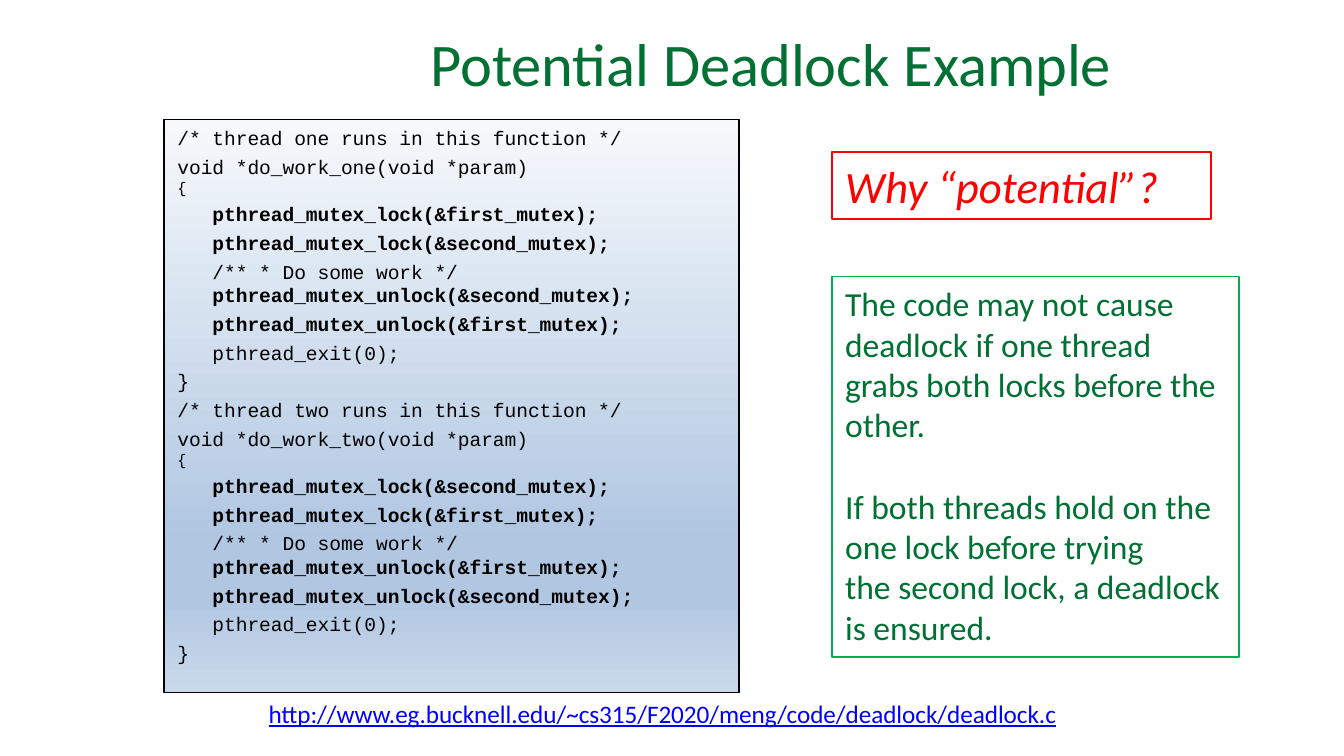
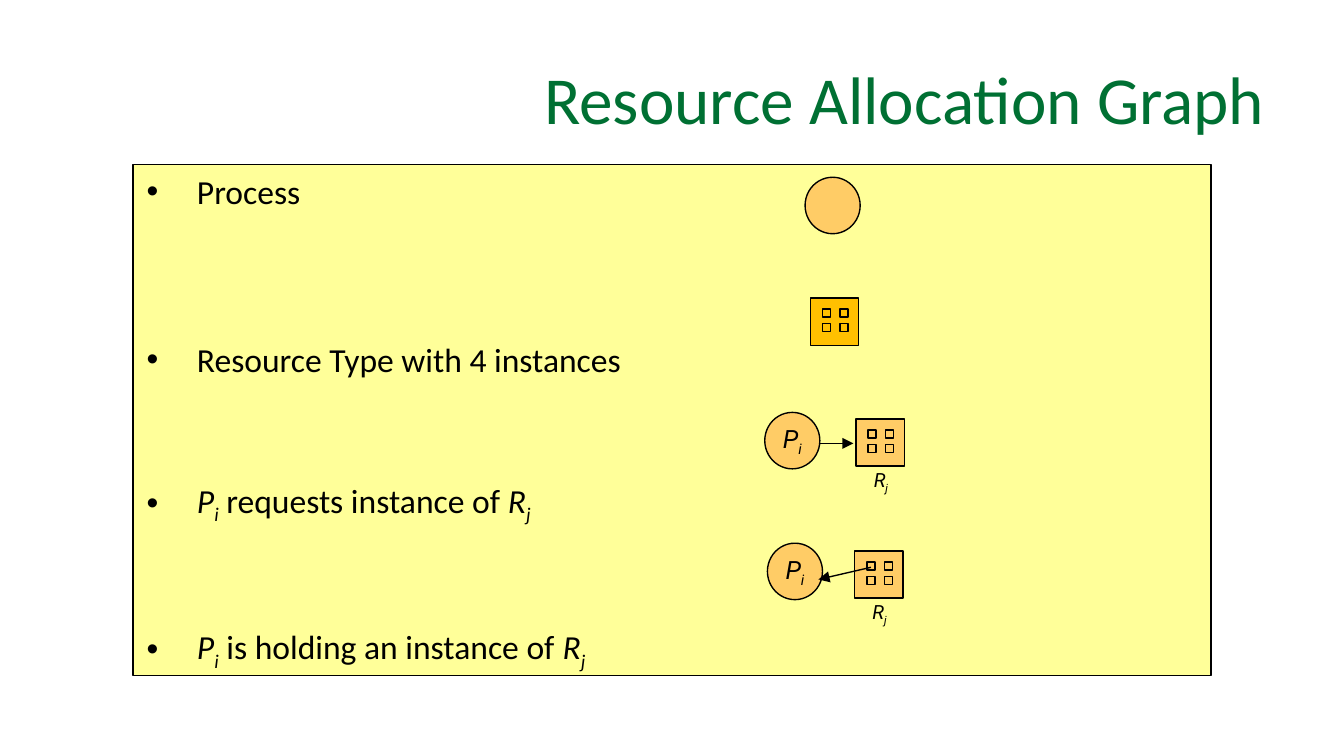
from typing import NamedTuple, Optional

from lxml.etree import SubElement as Sub
from pptx import Presentation
from pptx.dml.color import RGBColor
from pptx.enum.shapes import MSO_CONNECTOR as Link, MSO_SHAPE as Form
from pptx.enum.text import MSO_ANCHOR as Anchor, MSO_AUTO_SIZE as Fit, PP_ALIGN as Align
from pptx.oxml.ns import qn
from pptx.util import Inches, Pt

# Widescreen, 16 to 9
WIDE = Inches(10)
HIGH = WIDE * 9 // 16

# Shared look
GREEN, BLACK, RED = "007033", "000000", "FF0000"
PEACH, GOLD, CREAM = "FFCC66", "FFC000", "FFFF99"
SANS, MONO, MARK = "Calibri", "Courier New", "Roboto"
EDGE = 0.75
STOPS = ((0, "F6F9FC"), (74, "B0C6E1"), (83, "B0C6E1"), (100, "CAD9EB"))


class Box(NamedTuple):
    """Left, top, width and height as percent of the slide."""
    x: float
    y: float
    w: float
    h: float


class Run(NamedTuple):
    text: str
    bold: bool = False
    slant: bool = False
    sub: bool = False
    size: Optional[float] = None


class Node(NamedTuple):
    """A process circle, or a resource square with four instances."""
    x: float
    y: float
    fill: str = PEACH
    name: str = ""


class Arrow(NamedTuple):
    x: float
    y: float
    to_x: float
    to_y: float


def across(share: float) -> int:
    return round(WIDE * share / 100)


def down(share: float) -> int:
    return round(HIGH * share / 100)


def frame(box: Box) -> tuple:
    return across(box.x), down(box.y), across(box.w), down(box.h)


def place(shape, box: Box) -> None:
    shape.left, shape.top, shape.width, shape.height = frame(box)


def tint(spot, code: str) -> None:
    """Colour a font, fill or line from a hex string."""
    spot.rgb = RGBColor.from_string(code)


def paint(shape, fill: Optional[str] = None, line: str = BLACK) -> None:
    if fill:
        shape.fill.solid()
        tint(shape.fill.fore_color, fill)
    else:
        shape.fill.background()
    tint(shape.line.color, line)
    shape.line.width = Pt(EDGE)


def write(shape, paras, *, size: float, color: str = BLACK, face: str = SANS,
          align=Align.LEFT, anchor=Anchor.TOP, wrap: bool = True, pad: bool = True,
          slant: bool = False, under: bool = False, gaps=None, plain: bool = False) -> None:
    """Fill a shape; each paragraph is a string or a list of runs."""
    body = shape.text_frame
    body.auto_size, body.word_wrap, body.vertical_anchor = Fit.NONE, wrap, anchor
    if not pad:
        body.margin_left = body.margin_right = 0
        body.margin_top = body.margin_bottom = 0
    for n, runs in enumerate(paras):
        para = body.add_paragraph() if n else body.paragraphs[0]
        if plain:
            props = para._p.get_or_add_pPr()
            props.set("marL", "0")
            props.set("indent", "0")
            Sub(props, qn("a:buNone"))
        para.alignment = align
        para.space_before = Pt((gaps or {}).get(n, 0))
        for part in [Run(runs)] if isinstance(runs, str) else runs:
            for row, piece in enumerate(part.text.split("\n")):
                if row:
                    para.add_line_break()
                if not piece:
                    continue
                run = para.add_run()
                run.text = piece
                font = run.font
                font.name, font.size = face, Pt(part.size or size)
                font.bold, font.italic = part.bold, part.slant or slant
                font.underline = under
                tint(font.color, color)
                if part.sub:
                    run._r.get_or_add_rPr().set("baseline", "-25000")


def start(deck, title: str, size: float, head: Box, area: Box):
    """Add a slide with its title and a framed body."""
    slide = deck.slides.add_slide(deck.slide_layouts[1])
    place(slide.shapes.title, head)
    write(slide.shapes.title, [title], size=size, color=GREEN,
          align=Align.RIGHT, anchor=Anchor.MIDDLE)
    body = slide.placeholders[1]
    place(body, area)
    return slide, body


def form(shapes, kind, box: Box, fill: Optional[str] = None, line: str = BLACK):
    shape = shapes.add_shape(kind, *frame(box))
    shape.shadow.inherit = False
    paint(shape, fill, line)
    return shape


def shade(shape) -> None:
    """Give a shape the vertical blue gradient."""
    shape.fill.gradient()
    shape.fill.gradient_angle = 270
    stops = shape.element.spPr.find(qn("a:gradFill")).find(qn("a:gsLst"))
    for old in list(stops):
        stops.remove(old)
    for share, code in STOPS:
        stop = Sub(stops, qn("a:gs"), pos=str(share * 1000))
        Sub(stop, qn("a:srgbClr"), val=code)


def symbol(base: str, sub: str) -> list[Run]:
    return [Run(base, slant=True), Run(sub, slant=True, sub=True)]


def process(slide, node: Node) -> None:
    disc = form(slide.shapes, Form.OVAL, Box(node.x, node.y, 4.1, 7.47), node.fill)
    if node.name:
        write(disc, [symbol(*node.name)], size=13.5, face=MARK, align=Align.CENTER,
              anchor=Anchor.MIDDLE, wrap=False, pad=False)


def store(slide, node: Node) -> None:
    group = slide.shapes.add_group_shape().shapes
    form(group, Form.RECTANGLE, Box(node.x, node.y, 3.6, 6.23), node.fill)
    for n in range(4):
        row, col = divmod(n, 2)
        cell = Box(node.x + 0.9 + 1.3 * col, node.y + 1.42 + 1.96 * row, 0.6, 1.07)
        form(group, Form.RECTANGLE, cell, node.fill)
    if node.name:
        tag = slide.shapes.add_textbox(*frame(Box(node.x + 0.2, node.y + 5.7, 3.3, 5)))
        write(tag, [symbol(*node.name)], size=10.5, face=MARK, align=Align.CENTER,
              anchor=Anchor.MIDDLE, wrap=False, pad=False)


def link(slide, arrow: Arrow) -> None:
    line = slide.shapes.add_connector(
        Link.STRAIGHT, across(arrow.x), down(arrow.y), across(arrow.to_x), down(arrow.to_y))
    tint(line.line.color, BLACK)
    line.line.width = Pt(EDGE)
    Sub(line.line._get_or_add_ln(), qn("a:tailEnd"), type="triangle")
    Sub(line._element.spPr, qn("a:effectLst"))


def thread(name: str, one: str, two: str) -> list:
    """Code of a thread that locks two mutexes in the given order."""
    def call(verb: str, lock: str) -> Run:
        return Run(f"   pthread_mutex_{verb}(&{lock}_mutex);", bold=True)

    return [
        f"/* thread {name} runs in this function */",
        [Run(f"void *do_work_{name}(void *param)\n"), Run("{", size=8.2)],
        [call("lock", one)],
        [call("lock", two)],
        [Run("   /** * Do some work */\n"), call("unlock", two)],
        [call("unlock", one)],
        "   pthread_exit(0);",
        "}",
    ]


def deadlock(deck) -> None:
    slide, body = start(deck, "Potential Deadlock Example", 32.4,
                        Box(20.7, 4.1, 63, 8.4), Box(12.2, 15.82, 42.8, 75.75))
    paint(body)
    shade(body)
    code = thread("one", "first", "second") + thread("two", "second", "first")
    write(body, code, size=10.5, face=MONO, plain=True,
          gaps=dict.fromkeys(range(1, len(code)), 2.8))

    # Source address
    foot = slide.shapes.add_textbox(*frame(Box(19, 91.55, 61.7, 8.4)))
    write(foot, ["http://www.eg.bucknell.edu/~cs315/F2020/meng/code/deadlock/deadlock.c"],
          size=13.5, color="0000FF", under=True)

    # Answer and question
    answer = form(slide.shapes, Form.RECTANGLE, Box(61.9, 36.6, 30.3, 50.3), line="00B050")
    write(answer, ["The code may not cause", "deadlock if one thread",
                   "grabs both locks before the", "other.",
                   "If both threads hold on the", "one lock before trying",
                   "the second lock, a deadlock", "is ensured."],
          size=18, color=GREEN, gaps={4: 22})
    ask = form(slide.shapes, Form.RECTANGLE, Box(61.9, 20.1, 28.2, 8.9), line=RED)
    write(ask, ["Why “potential”?"], size=24, color=RED, slant=True)


def graph(deck) -> None:
    slide, body = start(deck, "Resource Allocation Graph", 36,
                        Box(4.9, 5.5, 90.2, 14.95), Box(9.9, 21.75, 80.2, 67.6))
    paint(body, CREAM)
    write(body, ["Process", "Resource Type with 4 instances",
                 symbol("P", "i") + [Run(" requests instance of ")] + symbol("R", "j"),
                 symbol("P", "i") + [Run(" is holding an instance of ")] + symbol("R", "j")],
          size=18, gaps={1: 68, 2: 54, 3: 54})

    # Symbols beside the list
    for node in (Node(59.9, 23.45), Node(57.1, 71.85, name="Pi"), Node(56.9, 54.55, name="Pi")):
        process(slide, node)
    for node in (Node(60.3, 39.45, GOLD), Node(63.7, 55.45, name="Rj"),
                 Node(63.6, 72.9, name="Rj")):
        store(slide, node)
    for arrow in (Arrow(61, 58.65, 63.5, 58.65), Arrow(64.8, 75.05, 60.9, 76.65)):
        link(slide, arrow)


def main() -> None:
    deck = Presentation()
    deck.slide_width, deck.slide_height = WIDE, HIGH
    deadlock(deck)
    graph(deck)
    deck.save("out.pptx")


if __name__ == "__main__":
    main()
